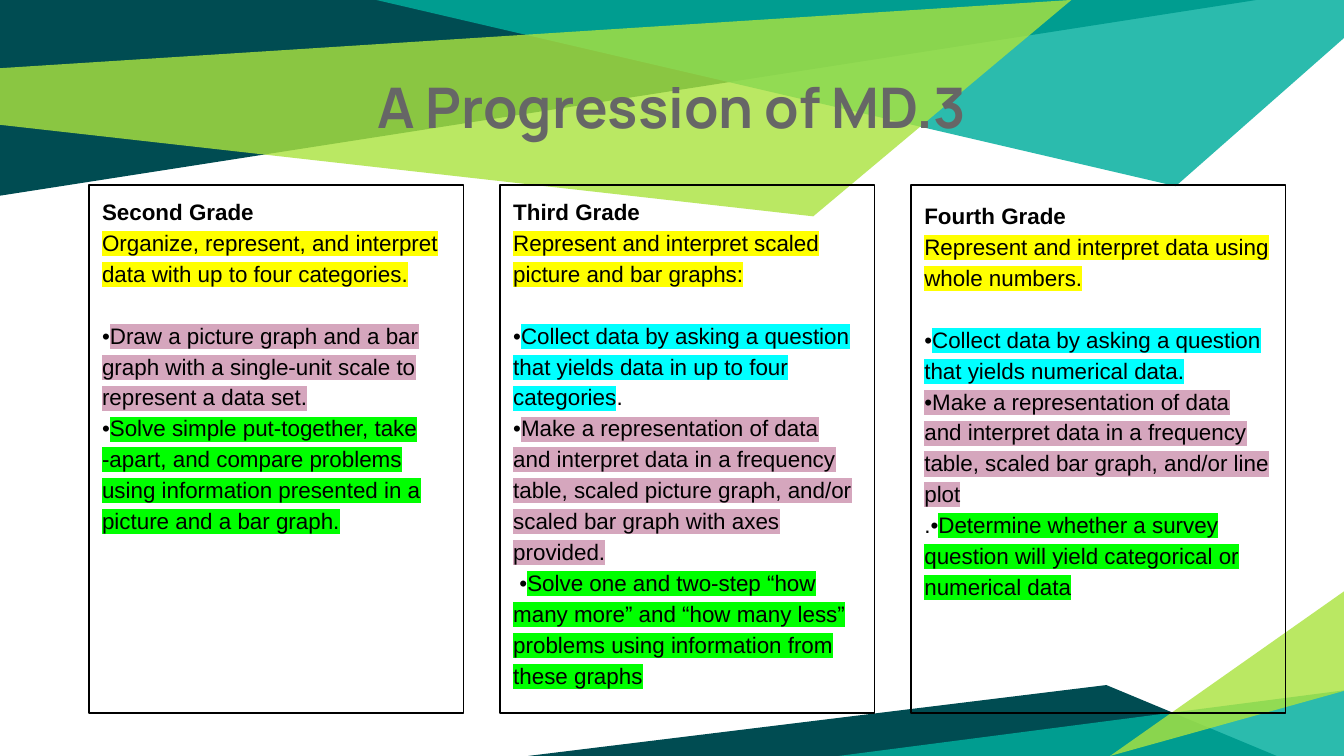
from dataclasses import dataclass
from typing import NamedTuple

from lxml import etree
from pptx import Presentation
from pptx.dml.color import RGBColor
from pptx.enum.shapes import MSO_SHAPE
from pptx.enum.text import MSO_ANCHOR, PP_ALIGN
from pptx.oxml.ns import qn
from pptx.util import Cm, Pt

RECTANGLE = MSO_SHAPE.RECTANGLE
TOP = MSO_ANCHOR.TOP
LEFT = PP_ALIGN.LEFT
CENTER = PP_ALIGN.CENTER


@dataclass(frozen=True)
class Theme:
    dark: str = "004C52"
    teal: str = "00AE9D"
    lime: str = "ABE33F"
    ink: str = "000000"
    title: str = "666666"
    yellow: str = "FFFF00"
    pink: str = "D5A6BD"
    cyan: str = "00FFFF"
    green: str = "00FF00"
    title_font: str = "Manrope"
    body_font: str = "Arial"
    title_size: float = 30
    body_size: float = 12
    border: float = 0.75
    line_spacing: float = 1.15
    section_gap: float = 16.5


THEME = Theme()


class Facet(NamedTuple):
    color: str
    opacity: int
    points: list[tuple[float, float]]


class Piece(NamedTuple):
    text: str
    highlight: str | None = None


class Panel(NamedTuple):
    heading: str
    summary: str
    points: list[list[Piece]]
    heading_spacing: float = 1.0


WIDTH, HEIGHT = 25.4, 14.29
PANEL_LEFT, PANEL_TOP, PANEL_STEP = 1.68, 3.5, 7.77
PANEL_WIDTH, PANEL_HEIGHT = 7.08, 9.98
INSET = 0.25

FACETS = [
    Facet(THEME.dark, 100, [(0, 0), (0, 3.7), (23.75, 0)]),
    Facet(THEME.teal, 83, [(7.11, 0), (22.22, 3.52), (WIDTH, 0.72), (WIDTH, 0)]),
    Facet(THEME.lime, 81, [(0, 1.29), (0, 2.36), (15.37, 4.09), (20.25, 0)]),
    Facet(THEME.dark, 100, [(9.98, HEIGHT), (24.13, HEIGHT), (20.91, 12.95)]),
    Facet(THEME.teal, 83, [(WIDTH, 13.05), (WIDTH, HEIGHT), (15.85, HEIGHT)]),
    Facet(THEME.lime, 81, [(WIDTH, 13.06), (WIDTH, 11.18), (20.98, HEIGHT)]),
]

BULLET = Piece("•")
PANELS = [
    Panel(
        "Second Grade",
        "Organize, represent, and interpret data with up to four categories.",
        [
            [BULLET, Piece("Draw a picture graph and a bar graph with a single-unit scale "
                           "to represent a data set.", THEME.pink)],
            [BULLET, Piece("Solve simple put-together, take", THEME.green)],
            [Piece("-apart, and compare problems using information presented in a "
                   "picture and a bar graph.", THEME.green)],
        ],
    ),
    Panel(
        "Third Grade",
        "Represent and interpret scaled picture and bar graphs:",
        [
            [BULLET, Piece("Collect data by asking a question that yields data in up to "
                           "four categories", THEME.cyan), Piece(".")],
            [BULLET, Piece("Make a representation of data and interpret data in a "
                           "frequency table, scaled picture graph, and/or scaled bar "
                           "graph with axes provided.", THEME.pink)],
            [Piece(" •"), Piece("Solve one and two-step “how many more” and “how many "
                                "less” problems using information from these graphs",
                                THEME.green)],
        ],
    ),
    Panel(
        "Fourth Grade",
        "Represent and interpret data using whole numbers.",
        [
            [BULLET, Piece("Collect data by asking a question that yields numerical "
                           "data.", THEME.cyan)],
            [Piece("•Make a representation of data and interpret data in a frequency "
                   "table, scaled bar graph, and/or line plot", THEME.pink)],
            [Piece(".•"), Piece("Determine whether a survey question will yield "
                                "categorical or numerical data", THEME.green)],
        ],
        THEME.line_spacing,
    ),
]


def add_run(paragraph, text: str, *, font: str = THEME.body_font,
            size: float = THEME.body_size, color: str = THEME.ink,
            bold: bool = False, highlight: str | None = None) -> None:
    run = paragraph.add_run()
    run.text = text
    run.font.name = font
    run.font.size = Pt(size)
    run.font.bold = bold
    run.font.color.rgb = RGBColor.from_string(color)
    if highlight:
        marker = etree.Element(qn("a:highlight"))
        etree.SubElement(marker, qn("a:srgbClr"), val=highlight)
        run.font._element.find(qn("a:solidFill")).addnext(marker)


def prepare_frame(shape):
    frame = shape.text_frame
    frame.word_wrap = True
    frame.vertical_anchor = TOP
    frame.margin_left = frame.margin_right = Cm(INSET)
    frame.margin_top = frame.margin_bottom = Cm(INSET)
    return frame


def draw_facet(slide, facet: Facet) -> None:
    start, *rest = [(Cm(x), Cm(y)) for x, y in facet.points]
    builder = slide.shapes.build_freeform(*start)
    builder.add_line_segments(rest, close=True)
    shape = builder.convert_to_shape()
    shape.shadow.inherit = False
    shape.line.fill.background()
    shape.fill.solid()
    shape.fill.fore_color.rgb = RGBColor.from_string(facet.color)
    if facet.opacity < 100:
        color = shape._element.spPr.find(f"{qn('a:solidFill')}/{qn('a:srgbClr')}")
        etree.SubElement(color, qn("a:alpha"), val=str(facet.opacity * 1000))


def draw_title(slide, text: str) -> None:
    box = slide.shapes.add_textbox(Cm(2.46), Cm(1.12), Cm(20.47), Cm(2.39))
    paragraph = prepare_frame(box).paragraphs[0]
    paragraph.alignment = CENTER
    add_run(paragraph, text, font=THEME.title_font, size=THEME.title_size,
            color=THEME.title, bold=True)


def draw_panel(slide, panel: Panel, left: float) -> None:
    shape = slide.shapes.add_shape(RECTANGLE, Cm(left), Cm(PANEL_TOP),
                                   Cm(PANEL_WIDTH), Cm(PANEL_HEIGHT))
    shape.shadow.inherit = False
    shape.fill.background()
    shape.line.color.rgb = RGBColor.from_string(THEME.ink)
    shape.line.width = Pt(THEME.border)
    frame = prepare_frame(shape)

    heading = frame.paragraphs[0]
    heading.alignment = LEFT
    heading.line_spacing = panel.heading_spacing
    add_run(heading, panel.heading, bold=True)

    for index, pieces in enumerate([[Piece(panel.summary, THEME.yellow)], *panel.points]):
        paragraph = frame.add_paragraph()
        paragraph.alignment = LEFT
        paragraph.line_spacing = THEME.line_spacing
        if index == 0:
            paragraph.space_after = Pt(THEME.section_gap)
        for piece in pieces:
            add_run(paragraph, piece.text, highlight=piece.highlight)


def main() -> None:
    presentation = Presentation()
    presentation.slide_width = Cm(WIDTH)
    presentation.slide_height = Cm(HEIGHT)
    slide = presentation.slides.add_slide(presentation.slide_layouts[6])
    for facet in FACETS:
        draw_facet(slide, facet)
    draw_title(slide, "A Progression of MD.3")
    for index, panel in enumerate(PANELS):
        draw_panel(slide, panel, PANEL_LEFT + index * PANEL_STEP)
    presentation.save("out.pptx")


if __name__ == "__main__":
    main()
